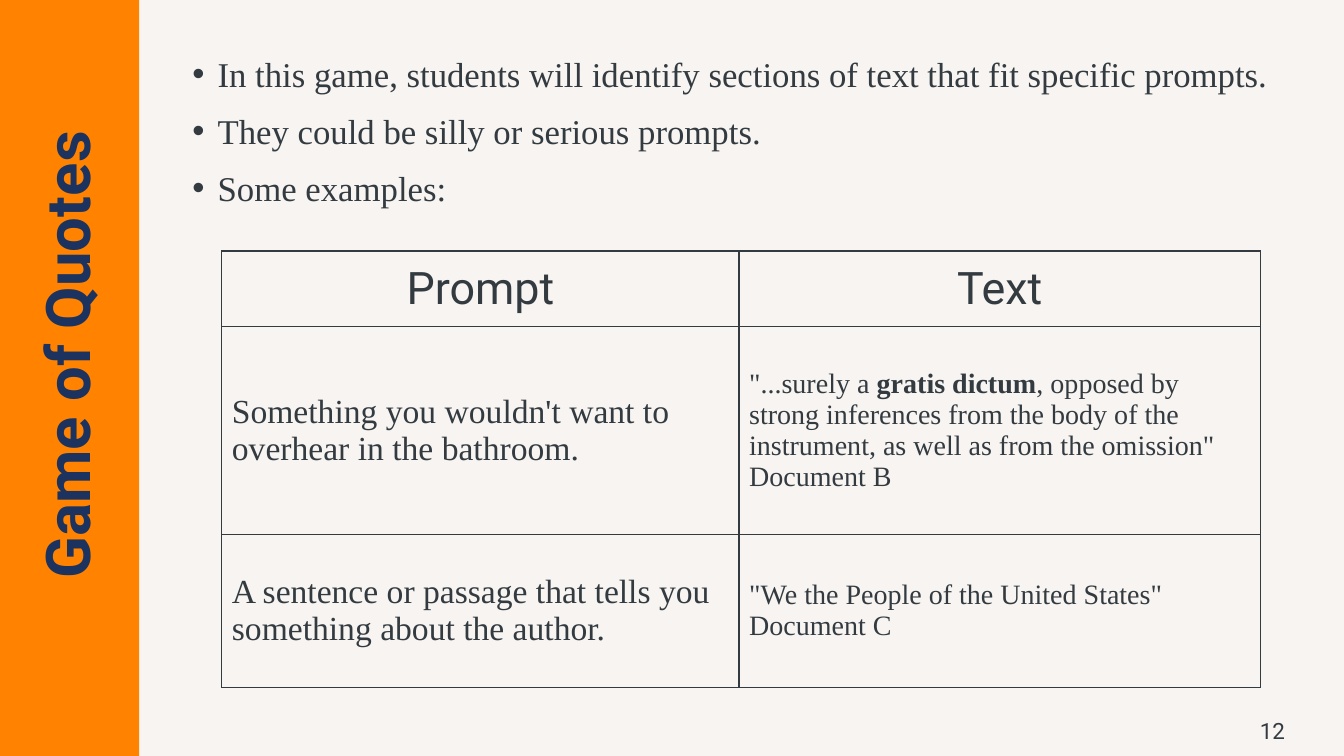
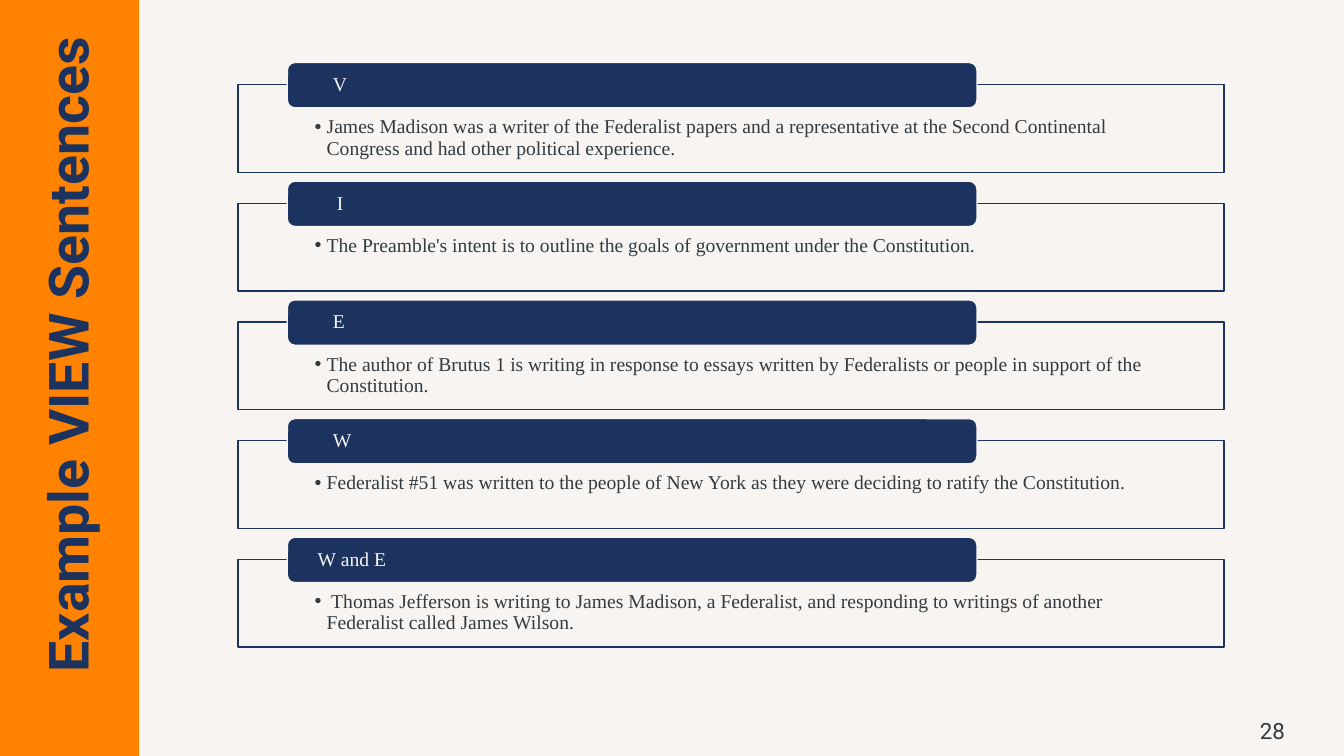
"""Build two lesson slides: a quote game and example VIEW sentences."""
from dataclasses import dataclass, replace

from pptx import Presentation
from pptx.dml.color import RGBColor
from pptx.enum.shapes import MSO_SHAPE
from pptx.enum.text import MSO_ANCHOR, PP_ALIGN
from pptx.oxml.xmlchemy import OxmlElement
from pptx.util import Inches, Pt

RECTANGLE = MSO_SHAPE.RECTANGLE
ROUNDED = MSO_SHAPE.ROUNDED_RECTANGLE
TOP = MSO_ANCHOR.TOP
MIDDLE = MSO_ANCHOR.MIDDLE
LEFT = PP_ALIGN.LEFT
CENTER = PP_ALIGN.CENTER
BLANK_LAYOUT = 6


@dataclass(frozen=True)
class TextStyle:
    size: float
    font: str
    color: str
    bold: bool = False


@dataclass(frozen=True)
class Theme:
    paper: str = "F7F4F1"
    orange: str = "FF8300"
    navy: str = "1C335F"
    ink: str = "333B41"
    sans: str = "Roboto"
    serif: str = "Times New Roman"
    title_size: float = 44
    long_title_size: float = 39.6
    number_size: float = 16
    bullet_size: float = 24.8
    header_size: float = 32
    prompt_size: float = 24
    quote_size: float = 20
    card_size: float = 14


THEME = Theme()
TITLE = TextStyle(THEME.title_size, THEME.sans, THEME.navy, True)
LONG_TITLE = replace(TITLE, size=THEME.long_title_size)
NUMBER = TextStyle(THEME.number_size, THEME.sans, THEME.ink)
HEADER = replace(NUMBER, size=THEME.header_size)
BULLET = TextStyle(THEME.bullet_size, THEME.serif, THEME.ink)
PROMPT = replace(BULLET, size=THEME.prompt_size)
QUOTE = replace(BULLET, size=THEME.quote_size)
QUOTE_BOLD = replace(QUOTE, bold=True)
CARD_TEXT = replace(BULLET, size=THEME.card_size)
CARD_LABEL = replace(CARD_TEXT, color=THEME.paper)


@dataclass(frozen=True)
class Box:
    left: float
    top: float
    width: float
    height: float

    def lengths(self):
        return [Inches(side) for side in (self.left, self.top, self.width, self.height)]


@dataclass(frozen=True)
class Run:
    text: str
    style: TextStyle


@dataclass(frozen=True)
class Layout:
    align: PP_ALIGN = LEFT
    line_spacing: float = 1.0
    space_before: float = 0
    indent: float = 0
    bullet: bool = False


@dataclass(frozen=True)
class Cell:
    paragraphs: list[list[Run]]
    align: PP_ALIGN = LEFT


@dataclass(frozen=True)
class Card:
    label: str
    sentence: str
    label_indent: float = 0


BAND = Box(0, 0, 1.38, 7.5)
TITLE_BOX = Box(-2.65, 2.97, 6.7, 1.1)
NUMBER_BOX = Box(12.14, 7.05, 0.96, 0.4)
BULLET_BOX = Box(1.81, 0.47, 11.09, 1.9)
TABLE_BOX = Box(2.2, 2.49, 10.3, 4.33)
COLUMN_WIDTHS = (5.13, 5.17)
ROW_HEIGHTS = (0.75, 2.06, 1.52)
DEFAULT_INSETS = (0.1, 0.05, 0.1, 0.05)
CARD_INSETS = (0.76, 0.32, 0.76, 0.11)
LABEL_INSETS = (0.28, 0, 0.28, 0)
FIRST_CARD = Box(2.36, 0.84, 9.78, 0.87)
LAST_CARD_TOP = 5.55
LABEL_BOX = Box(2.85, 0.62, 6.84, 0.45)

BULLETS = (
    "In this game, students will identify sections of text that fit specific prompts.",
    "They could be silly or serious prompts.",
    "Some examples:",
)
TABLE_ROWS = (
    (
        Cell([[Run("Prompt", HEADER)]], CENTER),
        Cell([[Run("Text", HEADER)]], CENTER),
    ),
    (
        Cell([[Run("Something you wouldn't want to overhear in the bathroom.", PROMPT)]]),
        Cell([
            [
                Run('"...surely a ', QUOTE),
                Run("gratis dictum", QUOTE_BOLD),
                Run(", opposed by strong inferences from the body of the instrument, "
                    'as well as from the omission"', QUOTE),
            ],
            [Run("Document B", QUOTE)],
        ]),
    ),
    (
        Cell([[Run("A sentence or passage that tells you something about the author.", PROMPT)]]),
        Cell([
            [Run('"We the People of the United States"', QUOTE)],
            [Run("Document C", QUOTE)],
        ]),
    ),
)
CARDS = (
    Card("V", "James Madison was a writer of the Federalist papers and a representative at "
         "the Second Continental Congress and had other political experience.", 0.15),
    Card("I", "The Preamble's intent is to outline the goals of government under the "
         "Constitution.", 0.19),
    Card("E", "The author of Brutus 1 is writing in response to essays written by "
         "Federalists or people in support of the Constitution.", 0.15),
    Card("W", "Federalist #51 was written to the people of New York as they were deciding "
         "to ratify the Constitution.", 0.15),
    Card("W and E", " Thomas Jefferson is writing to James Madison, a Federalist, and "
         "responding to writings of another Federalist called James Wilson."),
)


def color(value: str) -> RGBColor:
    """Turn a hexadecimal value into a colour."""
    return RGBColor.from_string(value)


def set_indent(paragraph, layout: Layout) -> None:
    """Indent a paragraph and hang its bullet, if it has one."""
    properties = paragraph._p.get_or_add_pPr()
    properties.set("marL", str(Inches(layout.indent)))
    properties.set("indent", str(Inches(-layout.indent if layout.bullet else 0)))
    if layout.bullet:
        font = OxmlElement("a:buFont")
        font.set("typeface", "Arial")
        character = OxmlElement("a:buChar")
        character.set("char", "•")
        properties.extend((font, character))


def write(frame, paragraphs: list[list[Run]], layout: Layout = Layout()) -> None:
    """Write paragraphs run by run into a text frame."""
    frame.word_wrap = True
    for index, runs in enumerate(paragraphs):
        paragraph = frame.add_paragraph() if index else frame.paragraphs[0]
        paragraph.alignment = layout.align
        paragraph.line_spacing = layout.line_spacing
        paragraph.space_before = Pt(layout.space_before if index else 0)
        set_indent(paragraph, layout)
        for item in runs:
            run = paragraph.add_run()
            run.text = item.text
            run.font.size = Pt(item.style.size)
            run.font.name = item.style.font
            run.font.bold = item.style.bold
            run.font.color.rgb = color(item.style.color)


def set_frame(frame, anchor: MSO_ANCHOR, insets: tuple = DEFAULT_INSETS) -> None:
    """Set the anchor and the insets of a text frame."""
    frame.vertical_anchor = anchor
    (frame.margin_left, frame.margin_top,
     frame.margin_right, frame.margin_bottom) = map(Inches, insets)


def add_panel(slide, kind: MSO_SHAPE, box: Box, fill: str, line: str | None = None):
    """Add a filled shape without a shadow."""
    shape = slide.shapes.add_shape(kind, *box.lengths())
    shape.shadow.inherit = False
    shape.fill.solid()
    shape.fill.fore_color.rgb = color(fill)
    if line:
        shape.line.color.rgb = color(line)
        shape.line.width = Pt(1)
    else:
        shape.line.fill.background()
    return shape


def add_text(slide, box: Box, paragraphs: list[list[Run]], layout: Layout,
             anchor: MSO_ANCHOR = MIDDLE):
    """Add a wrapped text box."""
    shape = slide.shapes.add_textbox(*box.lengths())
    set_frame(shape.text_frame, anchor)
    write(shape.text_frame, paragraphs, layout)
    return shape


def add_base_slide(presentation, title: str, number: int, style: TextStyle = TITLE):
    """Add a slide with the side band, upright title and slide number."""
    slide = presentation.slides.add_slide(presentation.slide_layouts[BLANK_LAYOUT])
    slide.background.fill.solid()
    slide.background.fill.fore_color.rgb = color(THEME.paper)
    add_panel(slide, RECTANGLE, BAND, THEME.orange)
    heading = add_text(slide, TITLE_BOX, [[Run(title, style)]], Layout(CENTER, 0.9))
    heading.rotation = 270
    add_text(slide, NUMBER_BOX, [[Run(str(number), NUMBER)]], Layout(CENTER))
    return slide


def set_borders(cell) -> None:
    """Draw a thin line on each side of a cell."""
    properties = cell._tc.get_or_add_tcPr()
    for position, side in enumerate(("a:lnL", "a:lnR", "a:lnT", "a:lnB")):
        line = OxmlElement(side)
        line.set("w", str(Pt(1)))
        fill = OxmlElement("a:solidFill")
        ink = OxmlElement("a:srgbClr")
        ink.set("val", THEME.ink)
        fill.append(ink)
        line.append(fill)
        properties.insert(position, line)


def add_prompt_table(slide) -> None:
    """Add the table of prompts and matching quotes."""
    table = slide.shapes.add_table(
        len(ROW_HEIGHTS), len(COLUMN_WIDTHS), *TABLE_BOX.lengths()).table
    table.first_row = False
    table.horz_banding = False
    for column, width in zip(table.columns, COLUMN_WIDTHS):
        column.width = Inches(width)
    for row, height, contents in zip(table.rows, ROW_HEIGHTS, TABLE_ROWS):
        row.height = Inches(height)
        for cell, content in zip(row.cells, contents):
            cell.fill.background()
            cell.vertical_anchor = MIDDLE
            set_borders(cell)
            write(cell.text_frame, content.paragraphs, Layout(content.align))


def add_card(slide, card: Card, offset: float) -> None:
    """Add an outlined sentence with its label bar."""
    body = add_panel(slide, RECTANGLE, replace(FIRST_CARD, top=FIRST_CARD.top + offset),
                     THEME.paper, THEME.navy)
    set_frame(body.text_frame, TOP, CARD_INSETS)
    write(body.text_frame, [[Run(card.sentence, CARD_TEXT)]],
          Layout(line_spacing=0.9, indent=0.12, bullet=True))
    label = add_panel(slide, ROUNDED, replace(LABEL_BOX, top=LABEL_BOX.top + offset),
                      THEME.navy, THEME.paper)
    set_frame(label.text_frame, MIDDLE, LABEL_INSETS)
    write(label.text_frame, [[Run(card.label, CARD_LABEL)]],
          Layout(line_spacing=0.9, indent=card.label_indent))


def main() -> None:
    """Build and save the presentation."""
    presentation = Presentation()
    presentation.slide_width = Inches(13.33)
    presentation.slide_height = Inches(7.5)

    game = add_base_slide(presentation, "Game of Quotes", 12)
    add_text(game, BULLET_BOX, [[Run(text, BULLET)] for text in BULLETS],
             Layout(space_before=11, indent=0.25, bullet=True), TOP)
    add_prompt_table(game)

    sentences = add_base_slide(presentation, "Example VIEW Sentences", 28, LONG_TITLE)
    pitch = (LAST_CARD_TOP - FIRST_CARD.top) / (len(CARDS) - 1)
    for index, card in enumerate(CARDS):
        add_card(sentences, card, index * pitch)

    presentation.save("out.pptx")


if __name__ == "__main__":
    main()
